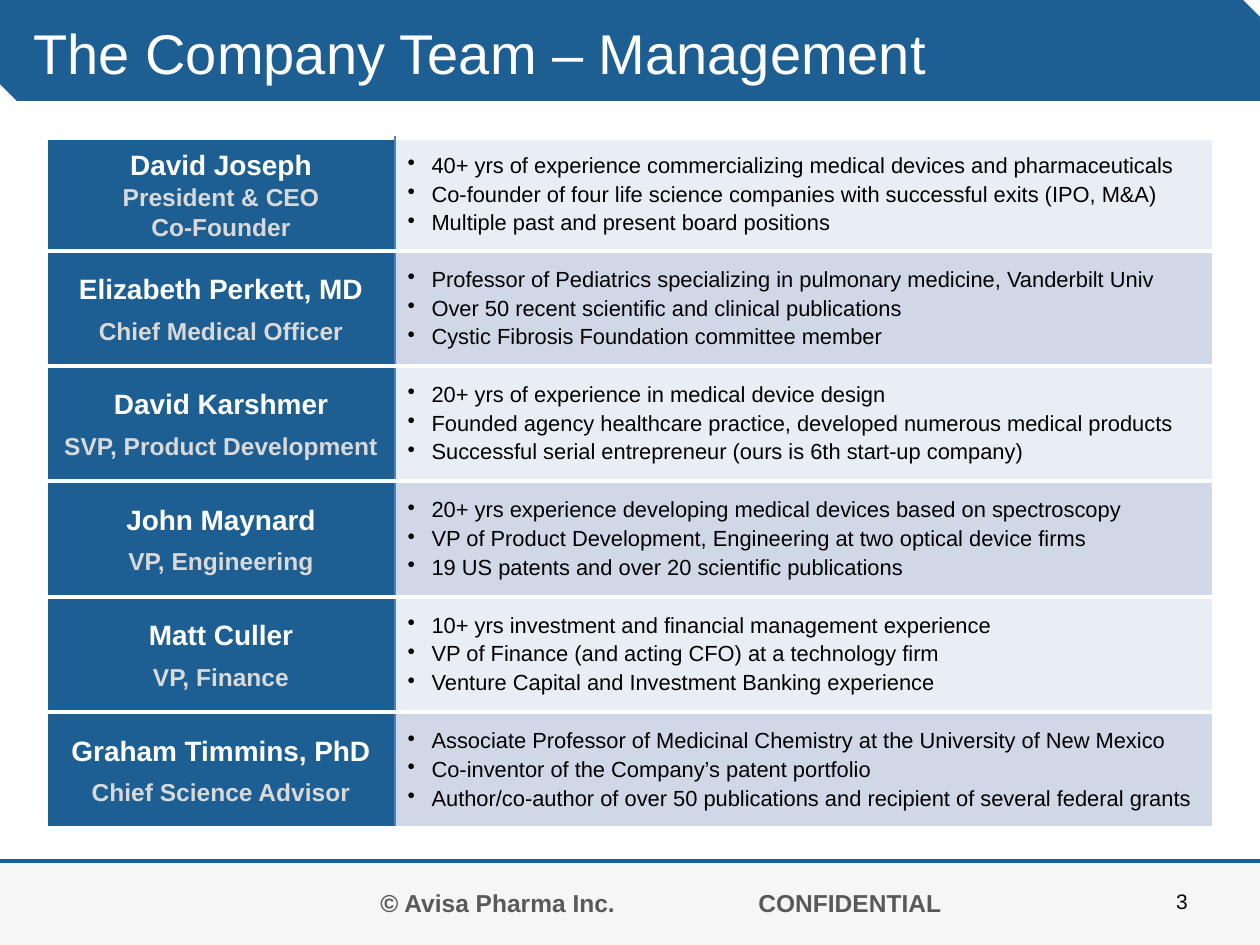
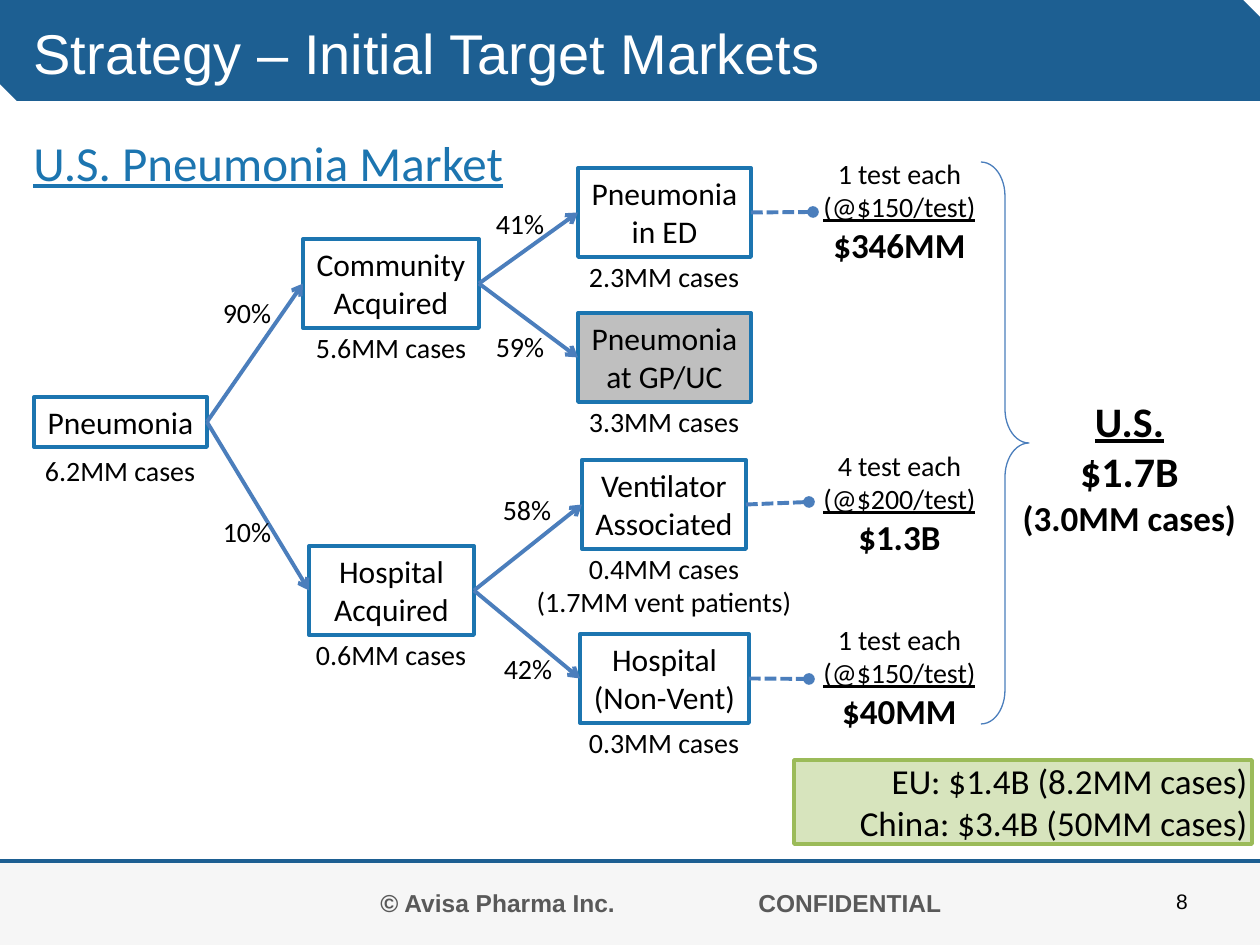
from dataclasses import dataclass
from typing import Optional

import lxml.etree
import pptx
import pptx.dml.color
import pptx.enum.dml
import pptx.enum.shapes
import pptx.enum.text
import pptx.oxml.ns
import pptx.util

SHAPE = pptx.enum.shapes.MSO_SHAPE
ALIGN = pptx.enum.text.PP_ALIGN
ANCHOR = pptx.enum.text.MSO_ANCHOR

EMU_PER_PX = 914400 / 126
SLIDE_WIDTH, SLIDE_HEIGHT = 1260, 945
FOOTER_TOP = 861
BAND_HEIGHT = 101

NAVY = "1D5F92"
BLUE = "1C75B0"
ARROW_BLUE = "4B7EBC"
TABLE_BLUE = "4F81BD"
WHITE = "FFFFFF"
BLACK = "000000"
SILVER = "D9D9D9"
ROW_FILLS = ("E9EDF4", "D0D8E8")


@dataclass(frozen=True)
class Box:
    left: int
    top: int
    width: int
    height: int

    @property
    def center(self) -> int:
        return self.left + self.width // 2

    @property
    def bottom(self) -> int:
        return self.top + self.height

    @property
    def right(self) -> int:
        return self.left + self.width

    @property
    def middle(self) -> int:
        return self.top + self.height // 2


@dataclass(frozen=True)
class TextLine:
    text: str
    size: float = 16
    color: str = BLACK
    bold: bool = False
    underline: bool = False
    font: str = "Calibri"
    before: float = 0
    after: float = 0
    spacing: float = 1.0
    bullet: bool = False


@dataclass(frozen=True)
class Member:
    name: str
    roles: tuple[str, ...]
    facts: tuple[str, ...]


@dataclass(frozen=True)
class Node:
    box: Box
    words: tuple[str, ...]
    cases: tuple[str, ...]
    fill: Optional[str] = None
    gap: int = -4


@dataclass(frozen=True)
class Branch:
    source: str
    target: str
    share: str
    left: int
    top: int


@dataclass(frozen=True)
class Revenue:
    node: str
    top: int
    dot_x: int
    dot_y: int
    tests: str
    price: str
    total: str


MEMBERS = (
    Member("David Joseph", ("President & CEO", "Co-Founder"), (
        "40+ yrs of experience commercializing medical devices and pharmaceuticals",
        "Co-founder of four life science companies with successful exits (IPO, M&A)",
        "Multiple past and present board positions")),
    Member("Elizabeth Perkett, MD", ("Chief Medical Officer",), (
        "Professor of Pediatrics specializing in pulmonary medicine, Vanderbilt Univ",
        "Over 50 recent scientific and clinical publications",
        "Cystic Fibrosis Foundation committee member")),
    Member("David Karshmer", ("SVP, Product Development",), (
        "20+ yrs of experience in medical device design",
        "Founded agency healthcare practice, developed numerous medical products",
        "Successful serial entrepreneur (ours is 6th start-up company)")),
    Member("John Maynard", ("VP, Engineering",), (
        "20+ yrs experience developing medical devices based on spectroscopy",
        "VP of Product Development, Engineering at two optical device firms",
        "19 US patents and over 20 scientific publications")),
    Member("Matt Culler", ("VP, Finance",), (
        "10+ yrs investment and financial management experience",
        "VP of Finance (and acting CFO) at a technology firm",
        "Venture Capital and Investment Banking experience")),
    Member("Graham Timmins, PhD", ("Chief Science Advisor",), (
        "Associate Professor of Medicinal Chemistry at the University of New Mexico",
        "Co-inventor of the Company’s patent portfolio",
        "Author/co-author of over 50 publications and recipient of several federal grants")),
)

NODES = {
    "all": Node(Box(34, 397, 173, 50), ("Pneumonia",), ("6.2MM cases",), gap=0),
    "community": Node(Box(303, 239, 176, 89), ("Community", "Acquired"), ("5.6MM cases",)),
    "hospital": Node(Box(309, 546, 165, 89), ("Hospital", "Acquired"), ("0.6MM cases",)),
    "ed": Node(Box(578, 168, 173, 89), ("Pneumonia", "in ED"), ("2.3MM cases",)),
    "gp": Node(Box(578, 313, 173, 89), ("Pneumonia", "at GP/UC"), ("3.3MM cases",), "BFBFBF"),
    "ventilator": Node(Box(582, 460, 164, 89), ("Ventilator", "Associated"),
                       ("0.4MM cases", "(1.7MM vent patients)")),
    "non_vent": Node(Box(580, 634, 169, 89), ("Hospital", "(Non-Vent)"), ("0.3MM cases",)),
}

BRANCHES = (
    Branch("all", "hospital", "10%", 210, 508),
    Branch("all", "community", "90%", 210, 289),
    Branch("community", "gp", "59%", 483, 323),
    Branch("community", "ed", "41%", 483, 200),
    Branch("hospital", "non_vent", "42%", 491, 645),
    Branch("hospital", "ventilator", "58%", 490, 486),
)

REVENUES = (
    Revenue("ed", 150, 813, 212, "1 test each", "(@$150/test)", "$346MM"),
    Revenue("ventilator", 442, 809, 502, "4 test each", "(@$200/test)", "$1.3B"),
    Revenue("non_vent", 616, 809, 679, "1 test each", "(@$150/test)", "$40MM"),
)


def px(length: int) -> pptx.util.Emu:
    return pptx.util.Emu(round(length * EMU_PER_PX))


def rgb(color: str) -> pptx.dml.color.RGBColor:
    return pptx.dml.color.RGBColor.from_string(color)


def add_xml(parent, tag: str, **attributes: str):
    return lxml.etree.SubElement(parent, pptx.oxml.ns.qn(tag), **attributes)


def place(box: Box) -> tuple:
    return px(box.left), px(box.top), px(box.width), px(box.height)


def write(frame, lines, align=ALIGN.CENTER) -> None:
    for index, line in enumerate(lines):
        paragraph = frame.paragraphs[0] if index == 0 else frame.add_paragraph()
        paragraph.alignment = align
        paragraph.line_spacing = line.spacing
        paragraph.space_before = pptx.util.Pt(line.before if index else 0)
        paragraph.space_after = pptx.util.Pt(line.after)
        if line.bullet:
            properties = paragraph._p.get_or_add_pPr()
            properties.set("marL", str(px(24)))
            properties.set("indent", str(px(-24)))
            add_xml(properties, "a:buChar", char="•")
        run = paragraph.add_run()
        run.text = line.text
        run.font.name = line.font
        run.font.size = pptx.util.Pt(line.size)
        run.font.bold = line.bold
        run.font.underline = line.underline
        run.font.color.rgb = rgb(line.color)


def add_text(slide, box: Box, lines, align=ALIGN.CENTER, wrap: bool = False):
    shape = slide.shapes.add_textbox(*place(box))
    shape.text_frame.word_wrap = wrap
    write(shape.text_frame, lines, align)
    return shape


def add_shape(slide, kind, box: Box, fill: Optional[str] = None,
              line: Optional[str] = None, width: float = 2.25):
    shape = slide.shapes.add_shape(kind, *place(box))
    shape.shadow.inherit = False
    if fill:
        shape.fill.solid()
        shape.fill.fore_color.rgb = rgb(fill)
    else:
        shape.fill.background()
    if line:
        shape.line.color.rgb = rgb(line)
        shape.line.width = pptx.util.Pt(width)
    else:
        shape.line.fill.background()
    return shape


def add_line(slide, start: tuple[int, int], end: tuple[int, int], color: str,
             tail: Optional[str] = None, dashed: bool = False):
    connector = slide.shapes.add_connector(
        pptx.enum.shapes.MSO_CONNECTOR.STRAIGHT, *map(px, start + end))
    connector.line.color.rgb = rgb(color)
    connector.line.width = pptx.util.Pt(2.25)
    if dashed:
        connector.line.dash_style = pptx.enum.dml.MSO_LINE.SQUARE_DOT
    if tail:
        add_xml(connector.line._get_or_add_ln(), "a:tailEnd", type=tail)
    add_xml(connector._element.spPr, "a:effectLst")
    return connector


def add_slide(presentation, title: str, number: int):
    slide = presentation.slides.add_slide(presentation.slide_layouts[5])
    footer = add_shape(slide, SHAPE.RECTANGLE,
                       Box(0, FOOTER_TOP, SLIDE_WIDTH, SLIDE_HEIGHT - FOOTER_TOP), SILVER)
    footer_color = footer._element.spPr.find(".//" + pptx.oxml.ns.qn("a:srgbClr"))
    add_xml(footer_color, "a:alpha", val="21000")
    add_shape(slide, SHAPE.SNIP_2_DIAG_RECTANGLE, Box(0, 0, SLIDE_WIDTH, BAND_HEIGHT), NAVY)
    add_line(slide, (0, FOOTER_TOP), (SLIDE_WIDTH, FOOTER_TOP), NAVY)
    notice = add_text(slide, Box(368, 882, 588, 43), [TextLine(
        "© Avisa Pharma Inc.\tCONFIDENTIAL", 14, "595959", True, font="Arial")], ALIGN.LEFT)
    tabs = add_xml(notice.text_frame.paragraphs[0]._p.get_or_add_pPr(), "a:tabLst")
    add_xml(tabs, "a:tab", pos=str(px(378)), algn="l")
    page = add_text(slide, Box(1157, 882, 50, 38), [TextLine(str(number), 12, font="Arial")])
    page.text_frame.vertical_anchor = ANCHOR.MIDDLE
    heading = slide.shapes.title
    heading.left, heading.top, heading.width, heading.height = place(Box(21, 10, 1218, 84))
    heading.text_frame.vertical_anchor = ANCHOR.MIDDLE
    write(heading.text_frame, [TextLine(title, 32, WHITE, font="Arial")], ALIGN.LEFT)
    heading._element.getparent().append(heading._element)
    return slide


def format_cell(cell, fill: str, lines, align, borders: dict[str, tuple[str, float]]) -> None:
    cell.fill.solid()
    cell.fill.fore_color.rgb = rgb(fill)
    cell.vertical_anchor = ANCHOR.MIDDLE
    write(cell.text_frame, lines, align)
    properties = cell._tc.get_or_add_tcPr()
    for index, (side, (color, width)) in enumerate(borders.items()):
        border = add_xml(properties, f"a:ln{side}", w=str(pptx.util.Pt(width)))
        add_xml(add_xml(border, "a:solidFill"), "a:srgbClr", val=color)
        properties.insert(index, border)


def build_team(presentation) -> None:
    slide = add_slide(presentation, "The Company Team – Management", 3)
    first_height, other_height = 113, 577
    box = Box(47, 138, 1166, first_height + other_height)
    table = slide.shapes.add_table(len(MEMBERS), 2, *place(box)).table
    table.first_row = table.horz_banding = False
    table.columns[0].width, table.columns[1].width = px(348), px(818)
    rule = (WHITE, 2.25)
    divider = (TABLE_BLUE, 1)
    for index, member in enumerate(MEMBERS):
        others = len(MEMBERS) - 1
        table.rows[index].height = px(
            other_height * index // others - other_height * (index - 1) // others
            if index else first_height)
        gap = 0.35 if len(member.roles) == 1 else 0
        people = [TextLine(member.name, 16, WHITE, True, font="Arial",
                           after=16 * gap, spacing=1.1)]
        people += [TextLine(role, 14, SILVER, True, font="Arial",
                            after=14 * gap, spacing=1.1) for role in member.roles]
        facts = [TextLine(fact, 12.5, font="Arial", before=2, after=0.5, bullet=True)
                 for fact in member.facts]
        format_cell(table.cell(index, 0), NAVY, people, ALIGN.CENTER,
                    {"R": divider, "T": rule, "B": rule})
        format_cell(table.cell(index, 1), ROW_FILLS[index % 2], facts, ALIGN.LEFT,
                    {"L": divider, "T": rule, "B": rule})


def build_markets(presentation) -> None:
    slide = add_slide(presentation, "Strategy – Initial Target Markets", 8)
    add_shape(slide, SHAPE.RECTANGLE, Box(794, 760, 458, 84), "D7E4BD", "9BBB59", 2)
    shapes = {}
    for key, node in NODES.items():
        shapes[key] = add_shape(slide, SHAPE.RECTANGLE, node.box, node.fill, BLUE)
        frame = shapes[key].text_frame
        frame.word_wrap = False
        frame.vertical_anchor = ANCHOR.TOP
        write(frame, [TextLine(word, 18) for word in node.words])
        height = 13 + 34 * len(node.cases)
        add_text(slide, Box(node.box.center - 142, node.box.bottom + node.gap, 284, height),
                 [TextLine(cases) for cases in node.cases])
    for branch in BRANCHES:
        source, target = NODES[branch.source].box, NODES[branch.target].box
        arrow = add_line(slide, (source.right, source.middle), (target.left, target.middle),
                         ARROW_BLUE, "arrow")
        arrow.begin_connect(shapes[branch.source], 3)
        arrow.end_connect(shapes[branch.target], 1)
        add_text(slide, Box(branch.left, branch.top, 74, 47), [TextLine(branch.share)])
    for revenue in REVENUES:
        add_text(slide, Box(798, revenue.top, 203, 123), [
            TextLine(revenue.tests), TextLine(revenue.price, underline=True),
            TextLine(revenue.total, 20, bold=True)])
        box = NODES[revenue.node].box
        dash = add_line(slide, (box.right, box.middle), (revenue.dot_x, revenue.dot_y),
                        ARROW_BLUE, "oval", True)
        dash.begin_connect(shapes[revenue.node], 3)
    add_text(slide, Box(21, 126, 515, 72),
             [TextLine("U.S. Pneumonia Market", 28, BLUE, underline=True)], ALIGN.LEFT, True)
    add_text(slide, Box(1009, 389, 241, 158), [
        TextLine("U.S.", 24, bold=True, underline=True), TextLine("$1.7B", 24, bold=True),
        TextLine("(3.0MM cases)", 20, bold=True)])
    add_text(slide, Box(843, 753, 417, 97), [
        TextLine("EU: $1.4B (8.2MM cases)", 20), TextLine("China: $3.4B (50MM cases)", 20)],
        ALIGN.RIGHT, True)
    brace = add_shape(slide, SHAPE.RIGHT_BRACE, Box(981, 162, 48, 562), None, ARROW_BLUE, 0.75)
    brace.adjustments[0], brace.adjustments[1] = 0.708, 0.5


def main() -> None:
    presentation = pptx.Presentation()
    presentation.slide_width, presentation.slide_height = px(SLIDE_WIDTH), px(SLIDE_HEIGHT)
    build_team(presentation)
    build_markets(presentation)
    presentation.save("out.pptx")


if __name__ == "__main__":
    main()
